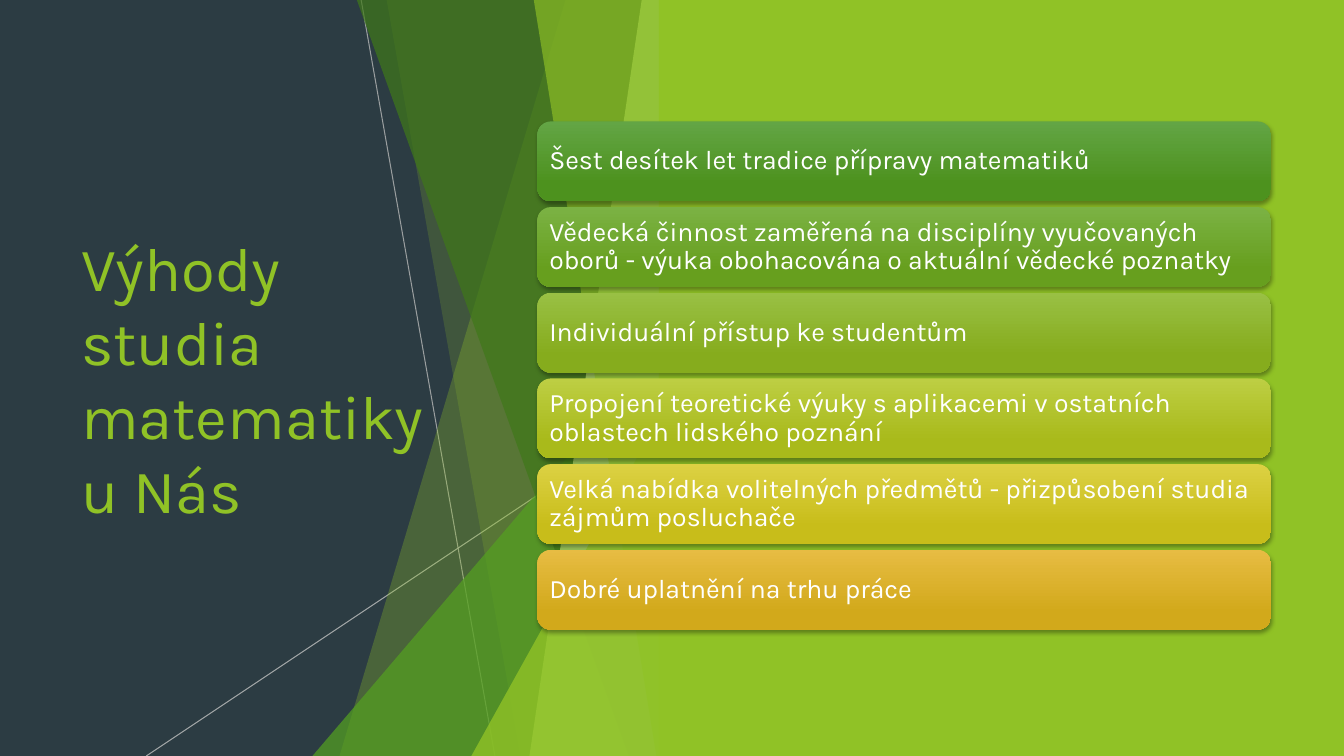
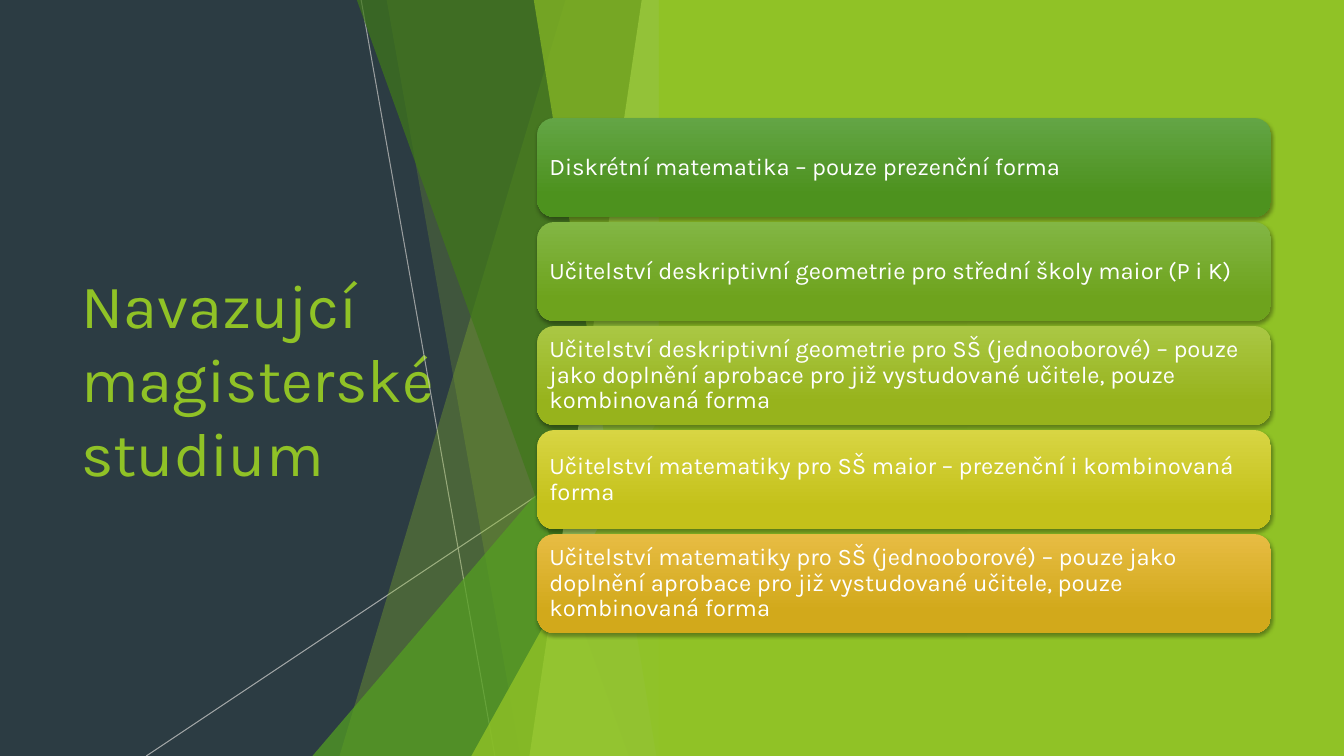
import pptx
import pptx.dml.color
import pptx.enum.shapes
import pptx.enum.text
import pptx.oxml
import pptx.oxml.ns
import pptx.util
from lxml import etree

Pt = pptx.util.Pt
RGB = pptx.dml.color.RGBColor.from_string
qn = pptx.oxml.ns.qn
MSO = pptx.enum.shapes.MSO_SHAPE
MIDDLE = pptx.enum.text.MSO_ANCHOR.MIDDLE

theme = {
    "dark": "2C3C43", "lime": "90C226", "green": "54A021", "forest": "3F7819",
    "pale": "C0E474", "grey": "BFBFBF", "white": "FFFFFF",
    "font": "Karla", "title_size": 44,
}
WIDTH, HEIGHT = 960, 540
FACET_RIGHT = 479.5
PANEL_LEFT = 470.6
CARD_LEFT, CARD_WIDTH, CARDS_MIDDLE = 383.9, 524, 268.2

# Thin lines: x1, y1, x2, y2, opacity
lines = [(258, 0, 353.5, 540, 75), (FACET_RIGHT, 290, 104.5, 540, 80)]

# Facets, back to front: kind, two numbers, colour, opacity
# "band": x of the left edge at top and bottom; "triangle": left and top
facets = [
    ("band", 404, 242.5, "lime", 30),
    ("band", 276.2, 371.8, "lime", 20),
    ("triangle", 223.2, 239.8, "green", 72),
    ("band", 254.9, 449.3, "forest", 70),
    ("band", 458.4, 378.2, "pale", 70),
    ("band", 381.3, 468.9, "lime", 65),
    ("triangle", 336.7, 283, "lime", 80),
]

# Cards: text, top colour, bottom colour
slides = [
    {"title": "Výhody studia matematiky u Nás", "size": 19, "height": 57, "gap": 4.2, "cards": [
        ("Šest desítek let tradice přípravy matematiků", "63A545", "4D921E"),
        ("Vědecká činnost zaměřená na disciplíny vyučovaných oborů - výuka obohacována "
         "o aktuální vědecké poznatky", "7BB244", "679F1E"),
        ("Individuální přístup ke studentům", "99C044", "86AC1D"),
        ("Propojení teoretické výuky s aplikacemi v ostatních oblastech lidského poznání",
         "BDCE43", "A9BA1B"),
        ("Velká nabídka volitelných předmětů - přizpůsobení studia zájmům posluchače",
         "DCD143", "C8BD1A"),
        ("Dobré uplatnění na trhu práce", "E7BC43", "D2A91B"),
    ]},
    {"title": "Navazujcí magisterské studium", "size": 17, "height": 70.6, "gap": 3.7, "cards": [
        ("Diskrétní matematika – pouze prezenční forma", "63A545", "4D921E"),
        ("Učitelství deskriptivní geometrie pro střední školy maior (P i K)", "82B644", "6EA31D"),
        ("Učitelství deskriptivní geometrie pro SŠ (jednooborové) – pouze jako doplnění "
         "aprobace pro již vystudované učitele, pouze kombinovaná forma", "AAC744", "97B31C"),
        ("Učitelství matematiky pro SŠ maior – prezenční i kombinovaná forma", "D8D543", "C4C11A"),
        ("Učitelství matematiky pro SŠ (jednooborové) – pouze jako doplnění aprobace pro již "
         "vystudované učitele, pouze kombinovaná forma", "E7BC43", "D2A91B"),
    ]},
]


def paint(sp, color, opacity=100):
    """Solid fill without outline or shadow."""
    sp.shadow.inherit = False
    sp.line.fill.background()
    sp.fill.solid()
    sp.fill.fore_color.rgb = RGB(theme[color])
    clr = sp._element.spPr.find(qn("a:solidFill"))[0]
    etree.SubElement(clr, qn("a:alpha"), val=str(opacity * 1000))


def write(sp, text, size, color, frame=None, para=None):
    """One left-aligned, vertically centred paragraph."""
    tf = sp.text_frame
    p = tf.paragraphs[0]
    r = p.add_run()
    r.text = text
    formats = [
        (tf, {"word_wrap": True, "vertical_anchor": MIDDLE, **(frame or {})}),
        (p, {"alignment": pptx.enum.text.PP_ALIGN.LEFT, **(para or {})}),
        (r.font, {"name": theme["font"], "size": Pt(size)}),
    ]
    for target, values in formats:
        for key, value in values.items():
            setattr(target, key, value)
    r.font.color.rgb = RGB(theme[color])


prs = pptx.Presentation()
prs.slide_width, prs.slide_height = Pt(WIDTH), Pt(HEIGHT)

for content in slides:
    s = prs.slides.add_slide(prs.slide_layouts[6])
    s.background.fill.solid()
    s.background.fill.fore_color.rgb = RGB(theme["dark"])

    # Title
    sp = s.shapes.add_textbox(Pt(51), Pt(108.7), Pt(279.5), Pt(322.6))
    write(sp, content["title"], theme["title_size"], "lime")

    # Thin lines
    for x1, y1, x2, y2, opacity in lines:
        sp = s.shapes.add_connector(pptx.enum.shapes.MSO_CONNECTOR.STRAIGHT,
                                    Pt(x1), Pt(y1), Pt(x2), Pt(y2))
        sp.line.width = Pt(0.75)
        sp.line.color.rgb = RGB(theme["grey"])
        spPr = sp._element.spPr
        clr = spPr.find(".//" + qn("a:srgbClr"))
        etree.SubElement(clr, qn("a:alpha"), val=str(opacity * 1000))
        etree.SubElement(spPr, qn("a:effectLst"))

    # Facets
    for kind, a, b, color, opacity in facets:
        if kind == "band":
            ff = s.shapes.build_freeform(Pt(a), Pt(0))
            corners = [(FACET_RIGHT, 0), (FACET_RIGHT, HEIGHT), (b, HEIGHT)]
            ff.add_line_segments([(Pt(x), Pt(y)) for x, y in corners], close=True)
            sp = ff.convert_to_shape()
        else:
            sp = s.shapes.add_shape(MSO.ISOSCELES_TRIANGLE, Pt(a), Pt(b),
                                    Pt(FACET_RIGHT - a), Pt(HEIGHT - b))
            sp.adjustments[0] = 1
        paint(sp, color, opacity)

    # Right panel
    sp = s.shapes.add_shape(MSO.RECTANGLE, Pt(PANEL_LEFT), Pt(0),
                            Pt(WIDTH - PANEL_LEFT), Pt(HEIGHT))
    paint(sp, "lime")

    # Cards, stacked around a common middle
    size, height, gap = content["size"], content["height"], content["gap"]
    pitch = height + gap
    top = CARDS_MIDDLE - (len(content["cards"]) * pitch - gap) / 2
    inset = Pt(0.3 * size)
    margins = {f"margin_{side}": inset for side in ("left", "top", "right", "bottom")}
    for i, (text, upper, lower) in enumerate(content["cards"]):
        sp = s.shapes.add_shape(MSO.ROUNDED_RECTANGLE, Pt(CARD_LEFT), Pt(top + i * pitch),
                                Pt(CARD_WIDTH), Pt(height))
        sp.line.fill.background()
        sp.fill.gradient()
        sp.fill.gradient_angle = 270
        for stop, color, position in zip(sp.fill.gradient_stops, (upper, lower), (0, 0.78)):
            stop.color.rgb = RGB(color)
            stop.position = position
        sp.shadow.inherit = False
        shadow = etree.SubElement(sp._element.spPr.find(qn("a:effectLst")), qn("a:outerShdw"),
                                  blurRad=str(Pt(3)), dist=str(Pt(2)), dir="5400000",
                                  rotWithShape="0")
        clr = etree.SubElement(shadow, qn("a:srgbClr"), val="000000")
        etree.SubElement(clr, qn("a:alpha"), val="35000")
        write(sp, text, size, "white", margins, {"line_spacing": 0.9})

prs.save("out.pptx")
